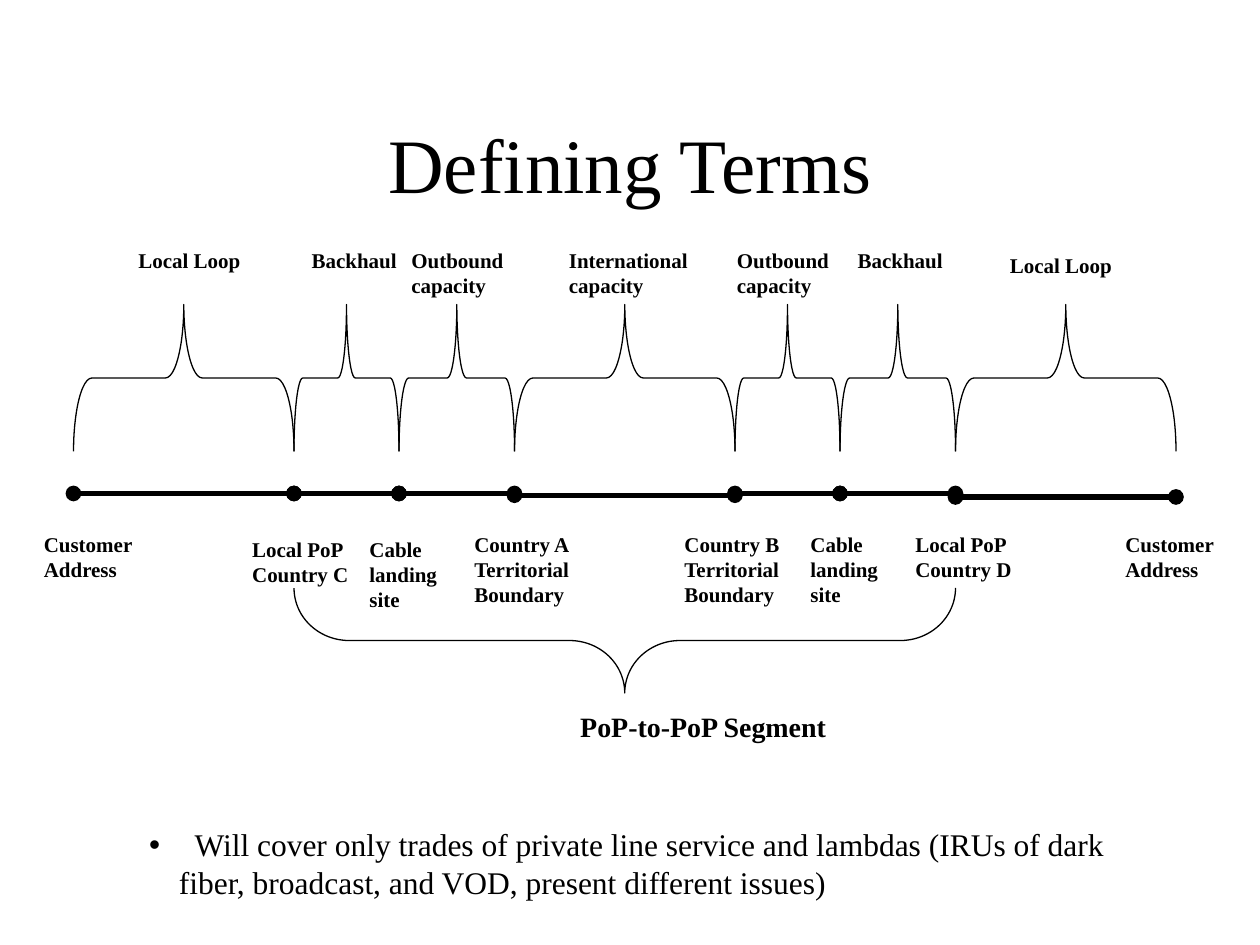
from itertools import pairwise
from pptx import Presentation
from pptx.dml.color import RGBColor
from pptx.enum.shapes import MSO_CONNECTOR as Link, MSO_SHAPE as Kind
from pptx.enum.text import MSO_ANCHOR as Anchor, MSO_AUTO_SIZE as Fit, PP_ALIGN as Align
from pptx.oxml.ns import qn
from pptx.util import Pt
from lxml.etree import SubElement as Sub

FACE = "Times New Roman"
INK = "000000"
NODES = [42, 168, 228, 294, 420, 480, 546, 672]
LEVELS = [282, 282, 282, 283, 282, 282, 284]
SPANS = [
    ("Local Loop", 72, 0, 74),
    ("Backhaul", 171, 0, 64),
    ("Outbound capacity", 228, 0, 78),
    ("International capacity", 318, 0, 90),
    ("Outbound capacity", 414, 0, 78),
    ("Backhaul", 483, 0, 64),
    ("Local Loop", 570, 3, 74),
]
PLACES = [
    ("Customer Address", 18, 0, 66),
    ("Local PoP\nCountry C", 137, 3, 70),
    ("Cable landing site", 204, 3, 54),
    ("Country A Territorial Boundary", 264, 0, 79),
    ("Country B Territorial Boundary", 384, 0, 79),
    ("Cable landing site", 456, 0, 54),
    ("Local PoP\nCountry D", 516, 0, 70),
    ("Customer Address", 636, 0, 67),
]


def color(code):
    return RGBColor.from_string(code)


def apply(item, form):
    for name, value in form.items():
        setattr(item, name, value)


def place(shape, box):
    apply(shape, dict(zip(("left", "top", "width", "height"), map(Pt, box))))


def write(frame, text, size, bold=False, align=Align.LEFT, anchor=Anchor.TOP):
    frame.text = text
    apply(frame, {"word_wrap": True, "auto_size": Fit.NONE, "vertical_anchor": anchor})
    for para in frame.paragraphs:
        apply(para, {"alignment": align, "space_before": Pt(0)})
        apply(para.font, {"name": FACE, "size": Pt(size), "bold": bold})
        para.font.color.rgb = color(INK)


def label(slide, text, box, size=12):
    shape = slide.shapes.add_textbox(*map(Pt, box))
    write(shape.text_frame, text, size, bold=True)


def brace(slide, box, turn):
    left, top, span, depth = box
    mid, level = left + span / 2, top + depth / 2
    frame = (mid - depth / 2, level - span / 2, depth, span)
    shape = slide.shapes.add_shape(Kind.LEFT_BRACE, *map(Pt, frame))
    shape.rotation = turn
    shape.adjustments[0] = span / 12 / min(span, depth)
    shape.shadow.inherit = False
    shape.fill.background()
    shape.line.color.rgb = color(INK)
    shape.line.width = Pt(0.75)


def link(slide, start, end, level):
    line = slide.shapes.add_connector(Link.STRAIGHT, *map(Pt, (start, level, end, level)))
    line.line.color.rgb = color(INK)
    line.line.width = Pt(3)
    stroke = line.line._get_or_add_ln()
    for tip in ("a:headEnd", "a:tailEnd"):
        Sub(stroke, qn(tip), type="oval")
    Sub(line._element.spPr, qn("a:effectLst"))


def title(slide, box):
    shape = slide.shapes.title
    place(shape, box)
    write(shape.text_frame, "Defining Terms", 44, align=Align.CENTER, anchor=Anchor.MIDDLE)


def route(slide, box):
    left, top, width, height = box
    for (start, end), level in zip(pairwise(NODES), LEVELS):
        brace(slide, (left + start, top + 36, end - start, 84), 90)
        link(slide, left + start, left + end, top + level - 138)
    for rows, base in ((SPANS, top), (PLACES, top + 162)):
        for text, start, drop, wide in rows:
            label(slide, text, (left + start, base + drop, wide, 50))
    brace(slide, (left + NODES[1], top + 198, NODES[-2] - NODES[1], 60), 270)
    label(slide, "PoP-to-PoP Segment", (left + 324.5, top + height - 27, 160, 27), 16)


def note(slide, box):
    shape = slide.placeholders[1]
    place(shape, box)
    text = ("\tWill cover only trades of private line service and lambdas "
            "(IRUs of dark fiber, broadcast, and VOD, present different issues)")
    write(shape.text_frame, text, 18)
    props = shape.text_frame.paragraphs[0]._p.get_or_add_pPr()
    for name, size in {"marL": 17, "indent": -17}.items():
        props.set(name, str(Pt(size)))
    Sub(props, qn("a:buChar"), char="•")
    stops = Sub(props, qn("a:tabLst"))
    Sub(stops, qn("a:tab"), pos=str(Pt(26)), algn="l")


def main():
    deck = Presentation()
    apply(deck, {"slide_width": Pt(720), "slide_height": Pt(540)})
    slide = deck.slides.add_slide(deck.slide_layouts[1])
    title(slide, (54, 48, 612, 90))
    route(slide, (0, 138, 720, 291))
    note(slide, (78, 468, 565, 50))
    deck.save("out.pptx")


if __name__ == "__main__":
    main()
